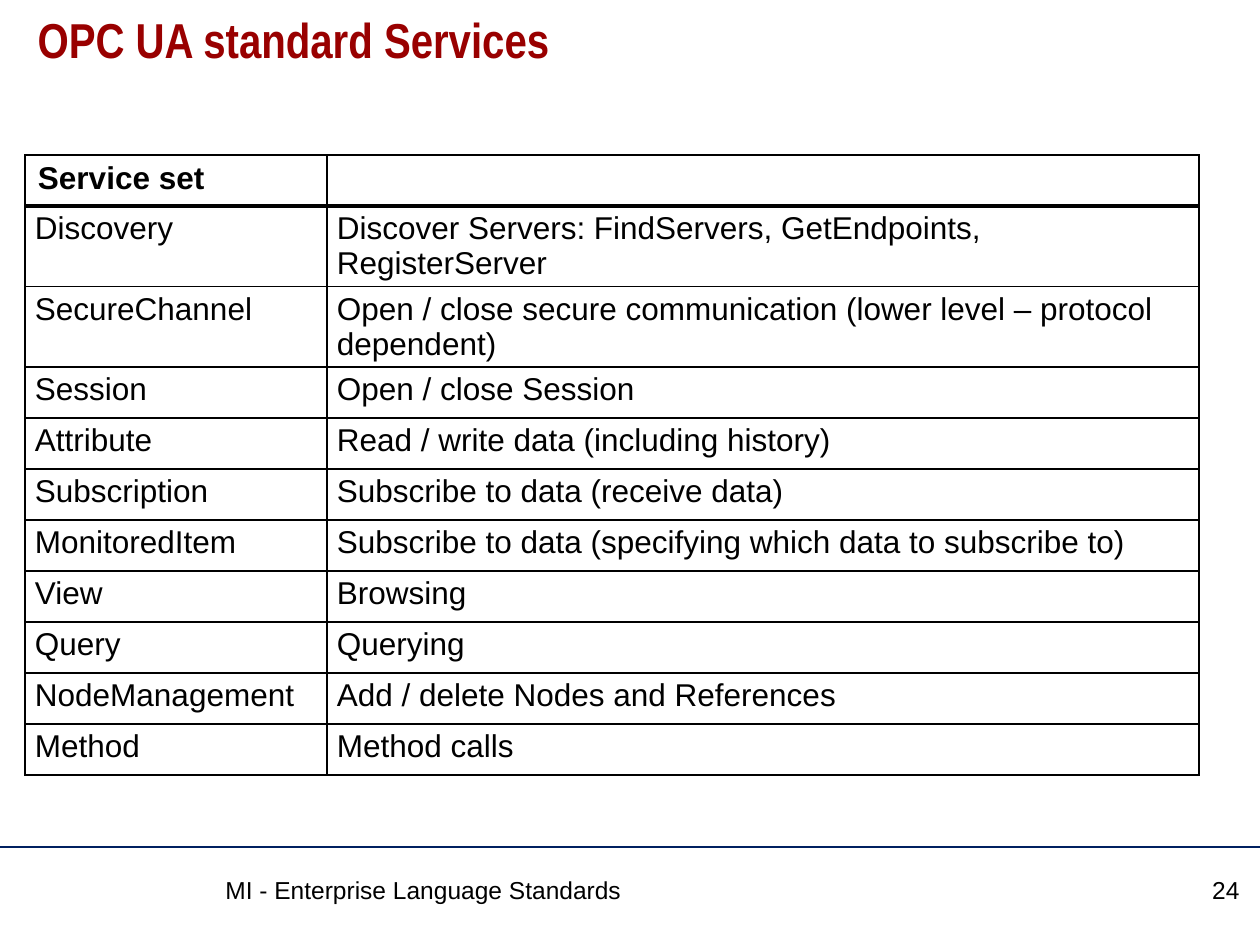
import pptx
import pptx.dml.color
import pptx.enum.shapes
import pptx.enum.text
import pptx.oxml.ns
import pptx.util
from dataclasses import dataclass
from lxml import etree

PX = pptx.util.Inches(1) / 126
ALIGN = pptx.enum.text.PP_ALIGN


@dataclass(frozen=True)
class Theme:
    title_color: str = "990000"
    text_color: str = "000000"
    rule_color: str = "002060"
    title_font: str = "Arial Narrow"
    body_font: str = "Arial"
    title_size: int = 28
    table_size: int = 18
    footer_size: int = 14


THEME = Theme()

SERVICES = [
    ("Service set", ""),
    ("Discovery", "Discover Servers: FindServers, GetEndpoints, RegisterServer"),
    ("SecureChannel", "Open / close secure communication (lower level – protocol dependent)"),
    ("Session", "Open / close Session"),
    ("Attribute", "Read / write data (including history)"),
    ("Subscription", "Subscribe to data (receive data)"),
    ("MonitoredItem", "Subscribe to data (specifying which data to subscribe to)"),
    ("View", "Browsing"),
    ("Query", "Querying"),
    ("NodeManagement", "Add / delete Nodes and References"),
    ("Method", "Method calls"),
]


def px(length):
    return pptx.util.Emu(round(length * PX))


def rgb(color):
    return pptx.dml.color.RGBColor.from_string(color)


def set_all(target, values):
    for name, value in values.items():
        setattr(target, name, value)


def write(frame, text, font, size, color, bold=False, align=ALIGN.LEFT):
    para = frame.paragraphs[0]
    para.alignment = align
    span = para.add_run()
    span.text = text
    set_all(span.font, {"name": font, "size": pptx.util.Pt(size), "bold": bold})
    span.font.color.rgb = rgb(color)
    return para


def add_title(page, box, text):
    title = page.shapes.title
    set_all(title, dict(zip(("left", "top", "width", "height"), map(px, box))))
    set_all(title.text_frame, {
        "word_wrap": True,
        "auto_size": pptx.enum.text.MSO_AUTO_SIZE.NONE,
        "vertical_anchor": pptx.enum.text.MSO_ANCHOR.TOP,
    })
    para = write(title.text_frame, text, THEME.title_font, THEME.title_size,
                 THEME.title_color, bold=True)
    para.line_spacing = 0.9


def add_borders(cell, widths):
    properties = cell._tc.get_or_add_tcPr()
    for side, width in widths.items():
        line = etree.SubElement(properties, pptx.oxml.ns.qn(f"a:ln{side}"),
                                w=str(pptx.util.Pt(width)))
        fill = etree.SubElement(line, pptx.oxml.ns.qn("a:solidFill"))
        etree.SubElement(fill, pptx.oxml.ns.qn("a:srgbClr"), val=THEME.text_color)


def add_service_table(page, box, rows):
    left, top, width, height = box
    first_column, row_height, wrapped_height = 302, 51, 80
    table = page.shapes.add_table(len(rows), 2, *map(px, box)).table
    set_all(table, {"first_row": False, "horz_banding": False})
    for column, column_width in zip(table.columns, (first_column, width - first_column)):
        column.width = px(column_width)

    for row_index, row in enumerate(rows):
        is_header = row_index == 0
        wraps = row_index in (1, 2)
        table.rows[row_index].height = px(wrapped_height if wraps else row_height)
        for column_index, text in enumerate(row):
            cell = table.cell(row_index, column_index)
            add_borders(cell, {"L": 1, "R": 1,
                               "T": 2 if row_index == 1 else 1,
                               "B": 2 if is_header else 1})
            cell.fill.background()
            side, edge = (13, 6) if is_header else (10, 5)
            set_all(cell, {"margin_left": px(side), "margin_right": px(side),
                           "margin_top": px(edge), "margin_bottom": px(edge)})
            if text:
                write(cell.text_frame, text, THEME.body_font, THEME.table_size,
                      THEME.text_color, bold=is_header)


def add_footer(page, box, label, number):
    left, top, width, height = box
    # Rule across the page
    rule = page.shapes.add_connector(pptx.enum.shapes.MSO_CONNECTOR.STRAIGHT,
                                     px(left), px(top), px(left + width), px(top))
    rule.line.color.rgb = rgb(THEME.rule_color)
    rule.line.width = pptx.util.Pt(0.75)
    etree.SubElement(rule._element.spPr, pptx.oxml.ns.qn("a:effectLst"))

    # Label and page number
    for text, offset, text_width, align in ((label, 213, 908, ALIGN.LEFT),
                                            (number, 1136, 116, ALIGN.RIGHT)):
        text_box = page.shapes.add_textbox(px(left + offset), px(top + 22),
                                           px(text_width), px(57))
        text_box.text_frame.word_wrap = True
        write(text_box.text_frame, text, THEME.body_font, THEME.footer_size,
              THEME.text_color, align=align)


def main():
    deck = pptx.Presentation()
    set_all(deck, {"slide_width": px(1260), "slide_height": px(945)})
    page = deck.slides.add_slide(deck.slide_layouts.get_by_name("Title Only"))
    add_title(page, (25, 10, 1211, 105), "OPC UA standard Services")
    add_service_table(page, (25, 155, 1174, 619), SERVICES)
    add_footer(page, (0, 847, 1260, 98), "MI - Enterprise Language Standards", "24")
    deck.save("out.pptx")


if __name__ == "__main__":
    main()
